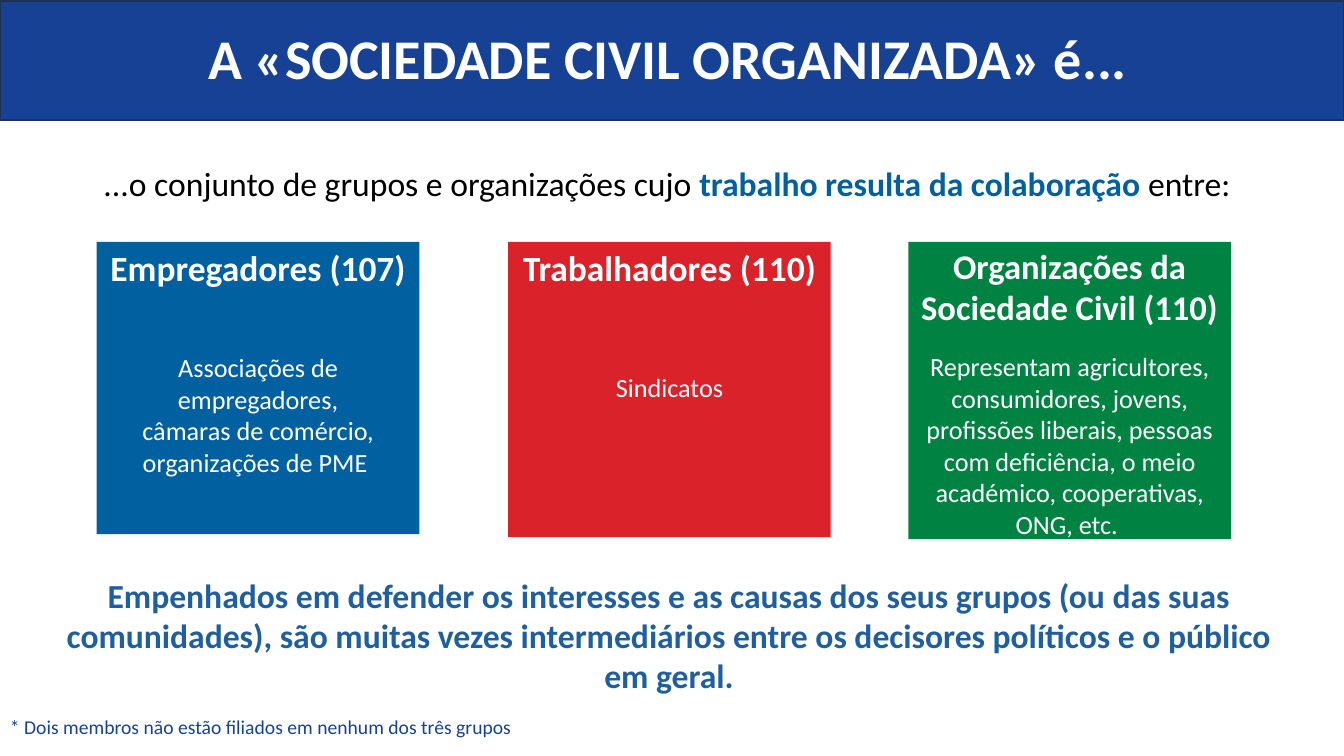
import pptx
import pptx.util
import pptx.dml.color
import pptx.enum.shapes
import pptx.enum.text

Inches = pptx.util.Inches
ALIGN = pptx.enum.text.PP_ALIGN

HUES = {
    "white": "FFFFFF", "black": "000000", "navy": "174195", "edge": "1E3256",
    "blue": "0060A0", "red": "D9222A", "green": "008342", "steel": "1F5FA0",
}

TITLE = "A «SOCIEDADE CIVIL ORGANIZADA» é..."
INTRO = [
    ("...o conjunto de grupos e organizações cujo ", "black", False),
    ("trabalho resulta da colaboração", "blue", True),
    (" entre:", "black", False),
]
GROUPS = [
    {"hue": "blue", "left": 0.96, "tall": 2.9, "head": "Empregadores (107)",
     "size": 25.3, "top": 2.39, "high": 0.54, "drop": 3.44, "deep": 1.36,
     "body": ["Associações de empregadores,", "câmaras de comércio,",
              "organizações de PME "]},
    {"hue": "red", "left": 5.04, "tall": 2.93, "head": "Trabalhadores (110)",
     "size": 25.3, "top": 2.39, "high": 0.54, "drop": 3.63, "deep": 0.42,
     "body": ["Sindicatos"]},
    {"hue": "green", "left": 9.01, "tall": 2.95,
     "head": "Organizações da Sociedade Civil (110)",
     "size": 24.7, "top": 2.38, "high": 0.86, "drop": 3.43, "deep": 1.99,
     "body": ["Representam agricultores, consumidores, jovens, profissões "
              "liberais, pessoas com deficiência, o meio académico, "
              "cooperativas, ONG, etc. "]},
]
CLOSE = ("Empenhados em defender os interesses e as causas dos seus grupos "
         "(ou das suas comunidades), são muitas vezes intermediários entre "
         "os decisores políticos e o público em geral.")
NOTE = "* Dois membros não estão filiados em nenhum dos três grupos"

WIDE, CARD, TOP = 13.33, 3.2, 2.4

deck = pptx.Presentation()
deck.slide_width, deck.slide_height = Inches(WIDE), Inches(7.5)
slide = deck.slides.add_slide(deck.slide_layouts[6])


def tint(name):
    return pptx.dml.color.RGBColor.from_string(HUES[name])


def put(item, values):
    for key, value in values.items():
        setattr(item, key, value)


def block(box, hue, edge=None):
    shape = slide.shapes.add_shape(
        pptx.enum.shapes.MSO_SHAPE.RECTANGLE, *map(Inches, box))
    shape.shadow.inherit = False
    shape.fill.solid()
    shape.fill.fore_color.rgb = tint(hue)
    if edge:
        shape.line.color.rgb = tint(edge)
        shape.line.width = pptx.util.Pt(1)
    else:
        shape.line.fill.background()


def write(box, lines, size, align=ALIGN.CENTER, space=1.0, pad=(0.1, 0.05)):
    frame = slide.shapes.add_textbox(*map(Inches, box)).text_frame
    side, edge = map(Inches, pad)
    put(frame, {"word_wrap": True, "margin_left": side, "margin_right": side,
                "margin_top": edge, "margin_bottom": edge})
    for row, line in enumerate(lines):
        para = frame.add_paragraph() if row else frame.paragraphs[0]
        put(para, {"alignment": align, "line_spacing": space})
        for text, hue, bold in line:
            run = para.add_run()
            run.text = text
            put(run.font, {"name": "Calibri", "size": pptx.util.Pt(size),
                           "bold": bold})
            run.font.color.rgb = tint(hue)


write((-0.05, 1.61, WIDE, 0.57), [INTRO], 24, space=0.9)

for group in GROUPS:
    left = group["left"]
    block((left, TOP, CARD, group["tall"]), group["hue"])
    write((left, group["top"], CARD, group["high"]),
          [[(group["head"], "white", True)]], group["size"])
    write((left, group["drop"], CARD, group["deep"]),
          [[(line, "white", False)] for line in group["body"]], 18.7)

write((0.35, 5.63, 12.57, 1.59), [[(CLOSE, "steel", True)]], 24,
      pad=(0.13, 0.07))
block((0, 0.01, WIDE, 1.18), "navy", "edge")
write((-0.09, 0.18, 13.43, 1.17), [[(TITLE, "white", True)]], 40)
write((0, 7.04, 9.34, 0.34), [[(NOTE, "navy", False)]], 14, ALIGN.LEFT)

deck.save("out.pptx")
